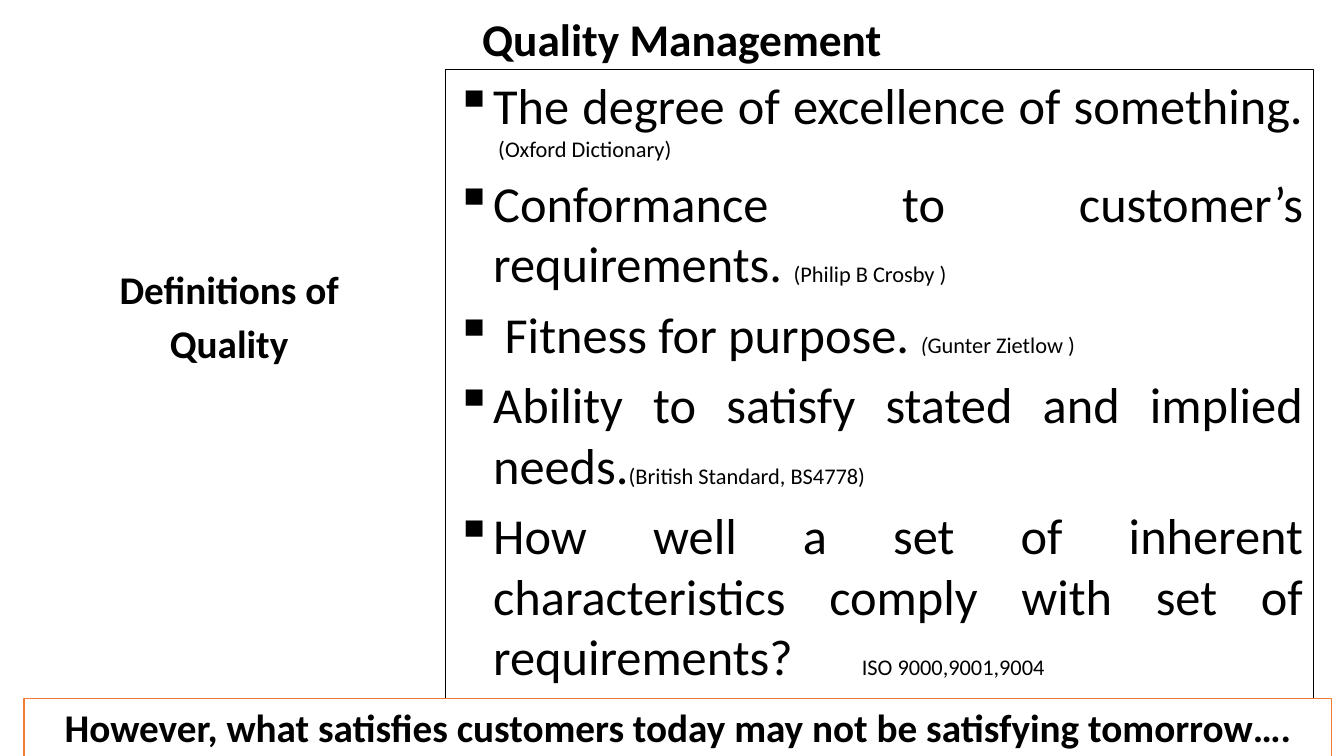
from lxml import etree
from pptx import Presentation
from pptx.dml.color import RGBColor
from pptx.enum.shapes import MSO_SHAPE
from pptx.enum.text import MSO_ANCHOR, PP_ALIGN
from pptx.oxml.ns import qn
from pptx.util import Cm, Pt

RECTANGLE = MSO_SHAPE.RECTANGLE
TOP, BOTTOM = MSO_ANCHOR.TOP, MSO_ANCHOR.BOTTOM
CENTER, JUSTIFY = PP_ALIGN.CENTER, PP_ALIGN.JUSTIFY

FONT = "Calibri"
BLACK, WHITE, ORANGE = "000000", "FFFFFF", "ED7D31"
BULLET_INDENT = Cm(0.95)
SOURCE_TAB = Cm(10.24)

DEFINITIONS = [
    ("The degree of excellence of something. ", [(" (Oxford Dictionary)", False)]),
    ("Conformance to customer’s requirements. ", [("(Philip B Crosby )", False)]),
    (" Fitness for purpose. ", [("(", True), ("Gunter Zietlow )", False)]),
    ("Ability to satisfy stated and implied needs.",
     [("(British Standard, BS4778)", False)]),
    ("How well a set of inherent characteristics comply with set of requirements?\t",
     [("ISO 9000,9001,9004", False)]),
]


def colour(hex_string):
    return RGBColor.from_string(hex_string)


def prepare_frame(holder, anchor=TOP):
    frame = holder.text_frame
    frame.word_wrap = True
    frame.vertical_anchor = anchor
    return frame


def add_panel(slide, left, top, width, height, outline):
    panel = slide.shapes.add_shape(RECTANGLE, left, top, width, height)
    panel.shadow.inherit = False
    panel.fill.solid()
    panel.fill.fore_color.rgb = colour(WHITE)
    panel.line.color.rgb = colour(outline)
    panel.line.width = Pt(1)
    return prepare_frame(panel)


def add_label(slide, left, top, width, height, anchor=TOP):
    return prepare_frame(slide.shapes.add_textbox(left, top, width, height), anchor)


def add_paragraph(frame, position, align, gap=0):
    paragraph = frame.add_paragraph() if position else frame.paragraphs[0]
    paragraph.alignment = align
    if position:
        paragraph.space_before = Pt(gap)
    return paragraph


def add_run(paragraph, text, size, bold=False, italic=False):
    run = paragraph.add_run()
    run.text = text
    run.font.name = FONT
    run.font.size = Pt(size)
    run.font.bold = bold
    run.font.italic = italic
    run.font.color.rgb = colour(BLACK)


def add_bullet(paragraph):
    properties = paragraph._p.get_or_add_pPr()
    properties.set("marL", str(BULLET_INDENT))
    properties.set("indent", str(-BULLET_INDENT))
    etree.SubElement(properties, qn("a:buChar"), char="▪")
    tabs = etree.SubElement(properties, qn("a:tabLst"))
    etree.SubElement(tabs, qn("a:tab"), pos=str(SOURCE_TAB), algn="l")


def add_definitions(slide):
    frame = add_panel(slide, Cm(11.23), Cm(1.75), Cm(21.87), Cm(15.85), BLACK)
    for position, (definition, sources) in enumerate(DEFINITIONS):
        paragraph = add_paragraph(frame, position, JUSTIFY, 7.2)
        add_bullet(paragraph)
        add_run(paragraph, definition, 36)
        for source, italic in sources:
            add_run(paragraph, source, 16, italic=italic)


def add_topic(slide):
    frame = add_label(slide, Cm(1), Cm(6.55), Cm(9.55), Cm(3))
    for position, line in enumerate(["Definitions of", "Quality"]):
        add_run(add_paragraph(frame, position, CENTER, 5.6), line, 28, bold=True)


def add_title(slide):
    frame = add_label(slide, Cm(0), Cm(0.36), Cm(34.37), Cm(1.4), BOTTOM)
    title = add_paragraph(frame, 0, CENTER)
    title.line_spacing = 0.8
    add_run(title, "Quality Management", 32.4, bold=True)


def add_conclusion(slide):
    frame = add_panel(slide, Cm(0.61), Cm(17.6), Cm(32.94), Cm(2.64), ORANGE)
    add_run(
        add_paragraph(frame, 0, CENTER),
        "However, what satisfies customers today may not be satisfying tomorrow….",
        28,
        bold=True,
    )


def main():
    presentation = Presentation()
    presentation.slide_width = Cm(33.87)
    presentation.slide_height = Cm(19.05)
    slide = presentation.slides.add_slide(presentation.slide_layouts[6])
    add_definitions(slide)
    add_topic(slide)
    add_title(slide)
    add_conclusion(slide)
    presentation.save("out.pptx")


if __name__ == "__main__":
    main()
